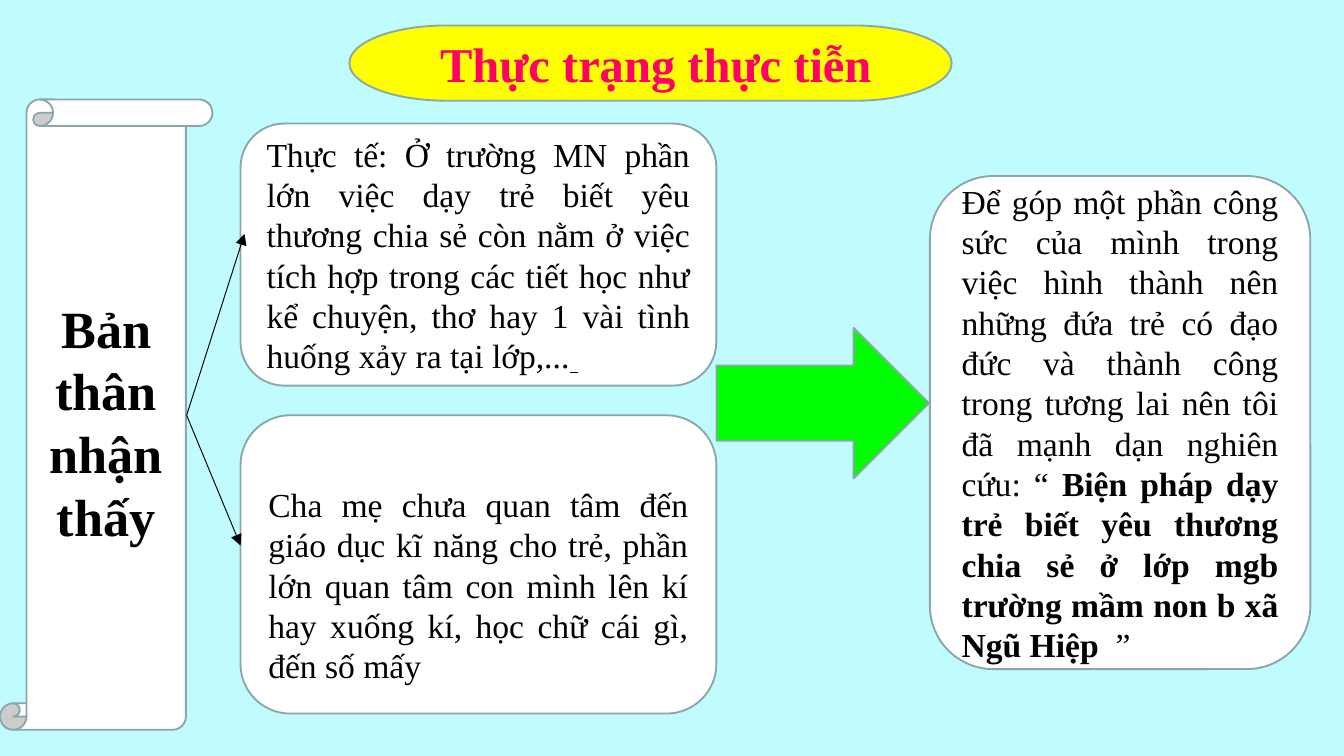
from lxml import etree
from pptx import Presentation
from pptx.dml.color import RGBColor
from pptx.enum.shapes import MSO_CONNECTOR, MSO_SHAPE
from pptx.enum.text import MSO_ANCHOR, PP_ALIGN
from pptx.oxml.ns import qn
from pptx.util import Pt

SKY = RGBColor(0xC0, 0xFB, 0xFE)
YELLOW = RGBColor(0xFF, 0xFF, 0x00)
PINK = RGBColor(0xFF, 0x00, 0x66)
WHITE = RGBColor(0xFF, 0xFF, 0xFF)
BLACK = RGBColor(0x00, 0x00, 0x00)
GREEN = RGBColor(0x00, 0xFF, 0x00)
GREY = RGBColor(0x8A, 0xA6, 0xA8)
FONT = "Times New Roman"
TITLE_ONLY = 5
TERMINATOR = MSO_SHAPE.FLOWCHART_TERMINATOR
SCROLL = MSO_SHAPE.VERTICAL_SCROLL
ROUNDED = MSO_SHAPE.ROUNDED_RECTANGLE
ARROW = MSO_SHAPE.RIGHT_ARROW
STRAIGHT = MSO_CONNECTOR.STRAIGHT
MIDDLE = MSO_ANCHOR.MIDDLE
CENTER = PP_ALIGN.CENTER
JUSTIFY = PP_ALIGN.JUSTIFY

TITLE_BOX = (187.2, 13.7, 322.6, 40.3)
SCROLL_BOX = (0, 53.3, 113.8, 337.7)
REALITY_BOX = (128.9, 66.2, 254.9, 140.4)
PARENTS_BOX = (128.9, 222.5, 254.9, 159.8)
ARROW_BOX = (383.8, 175.7, 113.8, 80.6)
GOAL_BOX = (498.2, 94.3, 203.8, 264.2)
FORK = (100, 222.5)
BRANCH_ENDS = ((131, 125.3), (128.9, 292.3))

REALITY = (
    ("Thực tế: Ở trường MN phần lớn việc dạy trẻ biết yêu thương chia sẻ còn "
     "nằm ở việc tích hợp trong các tiết học như kể chuyện, thơ hay 1 vài tình "
     "huống xảy ra tại lớp,...", {}),
    (" ", {"underline": True}),
)
PARENTS = (
    ("Cha mẹ chưa quan tâm đến giáo dục kĩ năng cho trẻ, phần lớn quan tâm con "
     "mình lên kí hay xuống kí, học chữ cái gì, đến số mấy", {}),
)
GOAL = (
    ("Để góp một phần công sức của mình trong việc hình thành nên những đứa trẻ "
     "có đạo đức và thành công trong tương lai nên tôi đã mạnh dạn nghiên cứu: “ ", {}),
    ("Biện pháp dạy trẻ biết yêu thương chia sẻ ở lớp mgb trường mầm non b xã "
     "Ngũ Hiệp  ", {"bold": True}),
    ("”", {}),
)


def place(s, box):
    """Move a shape to a box of left, top, width and height in points."""
    s.left, s.top, s.width, s.height = (Pt(v) for v in box)


def add_outline(slide, kind, box, fill):
    """Add a flat filled shape with the thin grey outline."""
    s = slide.shapes.add_shape(kind, *(Pt(v) for v in box))
    s.shadow.inherit = False
    s.fill.solid()
    s.fill.fore_color.rgb = fill
    s.line.color.rgb = GREY
    s.line.width = Pt(1)
    return s


def write(s, runs, size, align, color=BLACK):
    """Write formatted runs into the single paragraph of a shape."""
    tf = s.text_frame
    tf.word_wrap = True
    tf.vertical_anchor = MIDDLE
    p = tf.paragraphs[0]
    p.alignment = align
    for text, style in runs:
        r = p.add_run()
        r.text = text
        r.font.name = FONT
        r.font.size = Pt(size)
        r.font.color.rgb = color
        r.font.bold = style.get("bold", False)
        r.font.underline = style.get("underline", False)


def add_title(slide, box):
    """Lay the slide title over a yellow terminator."""
    add_outline(slide, TERMINATOR, box, YELLOW)
    title = slide.shapes.title
    place(title, box)
    slide.shapes._spTree.append(title._element)
    write(title, ((" Thực trạng thực tiễn", {"bold": True}),), 26, CENTER, PINK)


def add_scroll(slide, box):
    """Add the scroll that names the observer."""
    s = add_outline(slide, SCROLL, box, WHITE)
    write(s, (("Bản thân nhận thấy", {"bold": True}),), 28, CENTER)


def add_card(slide, box, runs, top_inset=3.6):
    """Add a rounded card with justified text."""
    s = add_outline(slide, ROUNDED, box, WHITE)
    s.text_frame.margin_top = Pt(top_inset)
    write(s, runs, 18, JUSTIFY)


def add_branch(slide, start, end):
    """Add a thin black line with an arrowhead at its end."""
    c = slide.shapes.add_connector(STRAIGHT, *(Pt(v) for v in start + end))
    c.line.color.rgb = BLACK
    c.line.width = Pt(0.5)
    etree.SubElement(c.line._get_or_add_ln(), qn("a:tailEnd"), type="triangle")
    etree.SubElement(c._element.spPr, qn("a:effectLst"))


def main():
    """Build the slide and save it."""
    prs = Presentation()
    prs.slide_width, prs.slide_height = Pt(720), Pt(405)
    slide = prs.slides.add_slide(prs.slide_layouts[TITLE_ONLY])
    slide.background.fill.solid()
    slide.background.fill.fore_color.rgb = SKY
    add_title(slide, TITLE_BOX)
    add_scroll(slide, SCROLL_BOX)
    add_card(slide, REALITY_BOX, REALITY)
    add_card(slide, PARENTS_BOX, PARENTS, top_inset=25.2)
    for end in BRANCH_ENDS:
        add_branch(slide, FORK, end)
    add_outline(slide, ARROW_BOX and ARROW, ARROW_BOX, GREEN)
    add_card(slide, GOAL_BOX, GOAL)
    prs.save("out.pptx")


if __name__ == "__main__":
    main()
